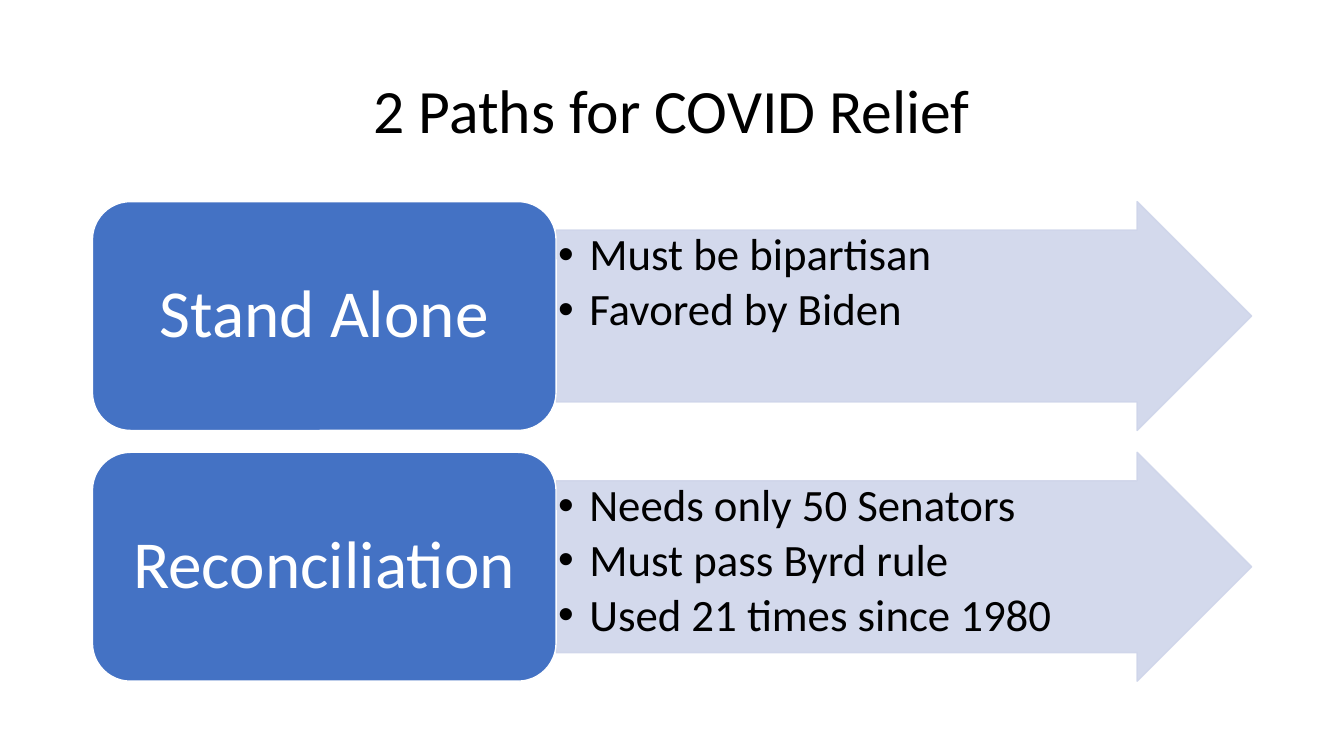
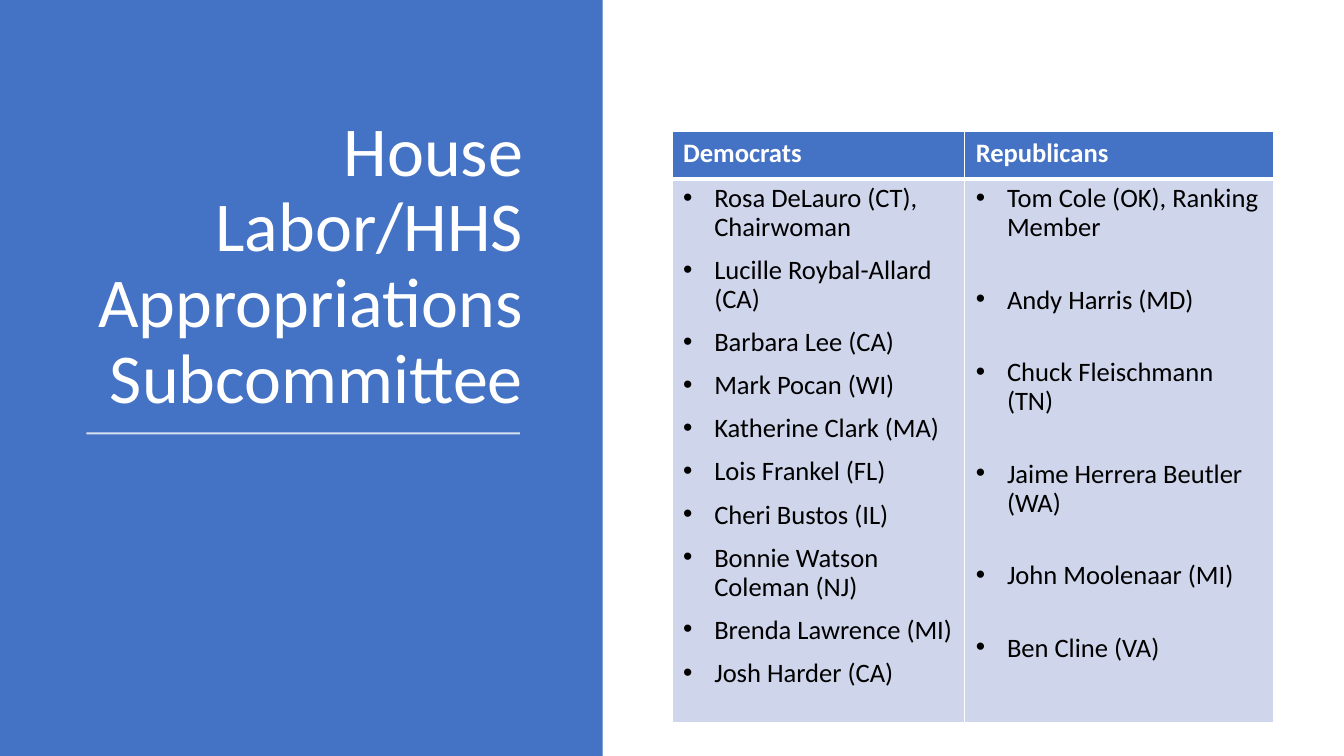
import collections
import dataclasses

import pptx
import pptx.dml.color
import pptx.enum.shapes
import pptx.enum.text
import pptx.oxml
import pptx.oxml.ns
import pptx.util

Pt = pptx.util.Pt
Inches = pptx.util.Inches
qn = pptx.oxml.ns.qn
Align = pptx.enum.text.PP_ALIGN
Anchor = pptx.enum.text.MSO_ANCHOR
Preset = pptx.enum.shapes.MSO_SHAPE

# The slide is a grid of 32 columns by 18 rows; every box is given in its cells.
COLUMNS, ROWS = 32, 18
SLIDE_WIDTH, SLIDE_HEIGHT = Inches(13.33), Inches(7.5)
Box = collections.namedtuple("Box", "left top width height")


@dataclasses.dataclass(frozen=True)
class Theme:
    font: str = "Calibri"
    accent: str = "4472C4"
    tint: str = "CFD5EA"
    dark: str = "000000"
    light: str = "FFFFFF"
    title_size: float = 44
    panel_title_size: float = 50
    label_size: float = 48
    point_size: float = 32
    table_size: float = 19
    line_spacing: float = 0.9
    bullet_indent: float = 0.31


THEME = Theme()

PATHS = [
    ("Stand Alone", ["Must be bipartisan", "Favored by Biden"]),
    ("Reconciliation", ["Needs only 50 Senators", "Must pass Byrd rule",
                        "Used 21 times since 1980"]),
]

# Party, points between members, members
PARTIES = [
    ("Democrats", 10, [
        "Rosa DeLauro (CT), Chairwoman", "Lucille Roybal-Allard (CA)",
        "Barbara Lee (CA)", "Mark Pocan (WI)", "Katherine Clark (MA)",
        "Lois Frankel (FL)", "Cheri Bustos (IL)",
        "Bonnie Watson Coleman (NJ)", "Brenda Lawrence (MI)",
        "Josh Harder (CA)"]),
    ("Republicans", 31, [
        "Tom Cole (OK), Ranking Member", "Andy Harris (MD)",
        "Chuck Fleischmann (TN)", "Jaime Herrera Beutler (WA)",
        "John Moolenaar (MI)", "Ben Cline (VA)"]),
]


def across(columns):
    return round(SLIDE_WIDTH * columns / COLUMNS)


def down(rows):
    return round(SLIDE_HEIGHT * rows / ROWS)


def place(box):
    return across(box.left), down(box.top), across(box.width), down(box.height)


def rgb(color):
    return pptx.dml.color.RGBColor.from_string(color)


def set_opacity(shape, percent):
    """Apply one opacity to both the fill and the line of a shape."""
    for color in shape._element.spPr.iter(qn("a:srgbClr")):
        color.makeelement(qn("a:alpha"))
        alpha = pptx.oxml.parse_xml(
            f'<a:alpha {pptx.oxml.ns.nsdecls("a")} val="{percent * 1000}"/>')
        color.append(alpha)


def add_bullet(paragraph):
    properties = paragraph._p.get_or_add_pPr()
    indent = Inches(THEME.bullet_indent)
    properties.set("marL", str(indent))
    properties.set("indent", str(-indent))
    for tag, name, value in (("buFont", "typeface", "Arial"),
                             ("buChar", "char", "•")):
        properties.append(pptx.oxml.parse_xml(
            f'<a:{tag} {pptx.oxml.ns.nsdecls("a")} {name}="{value}"/>'))


def write(frame, lines, size, color, align=Align.LEFT, bold=False,
          bullets=False, gap=0, spacing=THEME.line_spacing):
    """Fill a text frame, one paragraph a line, with gap points between."""
    frame.word_wrap = True
    for number, line in enumerate(lines):
        paragraph = frame.add_paragraph() if number else frame.paragraphs[0]
        if bullets:
            add_bullet(paragraph)
        paragraph.alignment = align
        paragraph.line_spacing = spacing
        paragraph.space_before = Pt(gap if number else 0)
        run = paragraph.add_run()
        run.text = line
        run.font.name = THEME.font
        run.font.size = Pt(size)
        run.font.bold = bold
        run.font.color.rgb = rgb(color)


def set_title(slide, box, text, size, color, align, anchor):
    title = slide.shapes.title
    title.left, title.top, title.width, title.height = place(box)
    frame = title.text_frame
    frame.auto_size = pptx.enum.text.MSO_AUTO_SIZE.NONE
    frame.vertical_anchor = anchor
    write(frame, [text], size, color, align)


def add_block(slide, preset, box, fill, outline=None):
    block = slide.shapes.add_shape(preset, *place(box))
    block.shadow.inherit = False
    block.fill.solid()
    block.fill.fore_color.rgb = rgb(fill)
    if outline:
        block.line.color.rgb = rgb(outline)
        block.line.width = Pt(1)
    else:
        block.line.fill.background()
    return block


def set_margins(frame, sides, ends):
    frame.margin_left = frame.margin_right = Inches(sides)
    frame.margin_top = frame.margin_bottom = Inches(ends)


def add_path(slide, box, name, points):
    """A label on the left 40 % of the box and an arrow with its points."""
    label_width = box.width * 0.4
    arrow = add_block(
        slide, Preset.RIGHT_ARROW,
        box._replace(left=box.left + label_width, width=box.width - label_width),
        THEME.tint, THEME.tint)
    arrow.adjustments[0], arrow.adjustments[1] = 0.75, 0.5
    set_opacity(arrow, 90)
    set_margins(arrow.text_frame, 0.02, 0.02)
    arrow.text_frame.vertical_anchor = Anchor.TOP
    write(arrow.text_frame, points, THEME.point_size, THEME.dark,
          bullets=True, gap=4.5)

    label = add_block(slide, Preset.ROUNDED_RECTANGLE,
                      box._replace(width=label_width), THEME.accent, THEME.light)
    set_margins(label.text_frame, 0.2, 0.1)
    label.text_frame.vertical_anchor = Anchor.MIDDLE
    write(label.text_frame, [name], THEME.label_size, THEME.light, Align.CENTER)


def add_paths(slide, box, paths, gap):
    height = (box.height - gap * (len(paths) - 1)) / len(paths)
    for number, (name, points) in enumerate(paths):
        top = box.top + number * (height + gap)
        add_path(slide, box._replace(top=top, height=height), name, points)


def add_title_panel(slide, box, text):
    """A coloured panel with the slide title above a thin rule."""
    panel = add_block(slide, Preset.RECTANGLE, box, THEME.accent)
    slide.shapes._spTree.insert(2, panel._element)
    set_title(slide, Box(box.left + 1.66, box.top + 2.11, 11.04, 7.97), text,
              THEME.panel_title_size, THEME.light, Align.RIGHT, Anchor.BOTTOM)
    level = down(box.top + 10.32)
    rule = slide.shapes.add_connector(
        pptx.enum.shapes.MSO_CONNECTOR.STRAIGHT,
        across(box.left + 2.06), level, across(box.left + 12.38), level)
    rule.line.color.rgb = rgb(THEME.light)
    rule.line.width = Pt(1.5)
    set_opacity(rule, 80)
    rule._element.spPr.append(pptx.oxml.parse_xml(
        f'<a:effectLst {pptx.oxml.ns.nsdecls("a")}/>'))


def style_cell(cell, fill, top, bottom):
    """Fill a cell and give it light borders; top and bottom are in points."""
    cell.fill.solid()
    cell.fill.fore_color.rgb = rgb(fill)
    properties = cell._tc.get_or_add_tcPr()
    sides = (("lnL", 1), ("lnR", 1), ("lnT", top), ("lnB", bottom))
    for position, (side, width) in enumerate(sides):
        properties.insert(position, pptx.oxml.parse_xml(
            f'<a:{side} {pptx.oxml.ns.nsdecls("a")} w="{Pt(width)}">'
            f'<a:solidFill><a:srgbClr val="{THEME.light}"/></a:solidFill>'
            f'</a:{side}>'))
    cell.margin_left = cell.margin_right = Inches(0.11)
    cell.margin_top = cell.margin_bottom = Inches(0.05)


def add_party_table(slide, box, parties, header_height, column_widths):
    table = slide.shapes.add_table(2, len(parties), *place(box)).table
    table.horz_banding = False
    table.rows[0].height = down(header_height)
    table.rows[1].height = down(box.height - header_height)
    for column, (party, gap, members) in enumerate(parties):
        table.columns[column].width = across(column_widths[column])
        header, body = table.cell(0, column), table.cell(1, column)
        style_cell(header, THEME.accent, 1, 3)
        write(header.text_frame, [party], THEME.table_size, THEME.light,
              bold=True, spacing=1.0)
        style_cell(body, THEME.tint, 3, 1)
        write(body.text_frame, members, THEME.table_size, THEME.dark,
              bullets=True, gap=gap)


def build_paths_slide(slide):
    set_title(slide, Box(2.2, 0.96, 27.6, 3.48), "2 Paths for COVID Relief",
              THEME.title_size, THEME.dark, Align.CENTER, Anchor.MIDDLE)
    add_paths(slide, Box(2.2, 4.8, 27.6, 11.42), PATHS, gap=0.52)


def build_subcommittee_slide(slide):
    add_title_panel(slide, Box(0, 0, 14.35, ROWS),
                    "House Labor/HHS Appropriations Subcommittee")
    add_party_table(slide, Box(16, 3.14, 14.33, 14.06), PARTIES,
                    header_height=1.13, column_widths=(6.97, 7.36))


def main():
    deck = pptx.Presentation()
    deck.slide_width, deck.slide_height = SLIDE_WIDTH, SLIDE_HEIGHT
    title_only = deck.slide_layouts.get_by_name("Title Only")
    for build in (build_paths_slide, build_subcommittee_slide):
        build(deck.slides.add_slide(title_only))
    deck.save("out.pptx")


if __name__ == "__main__":
    main()
